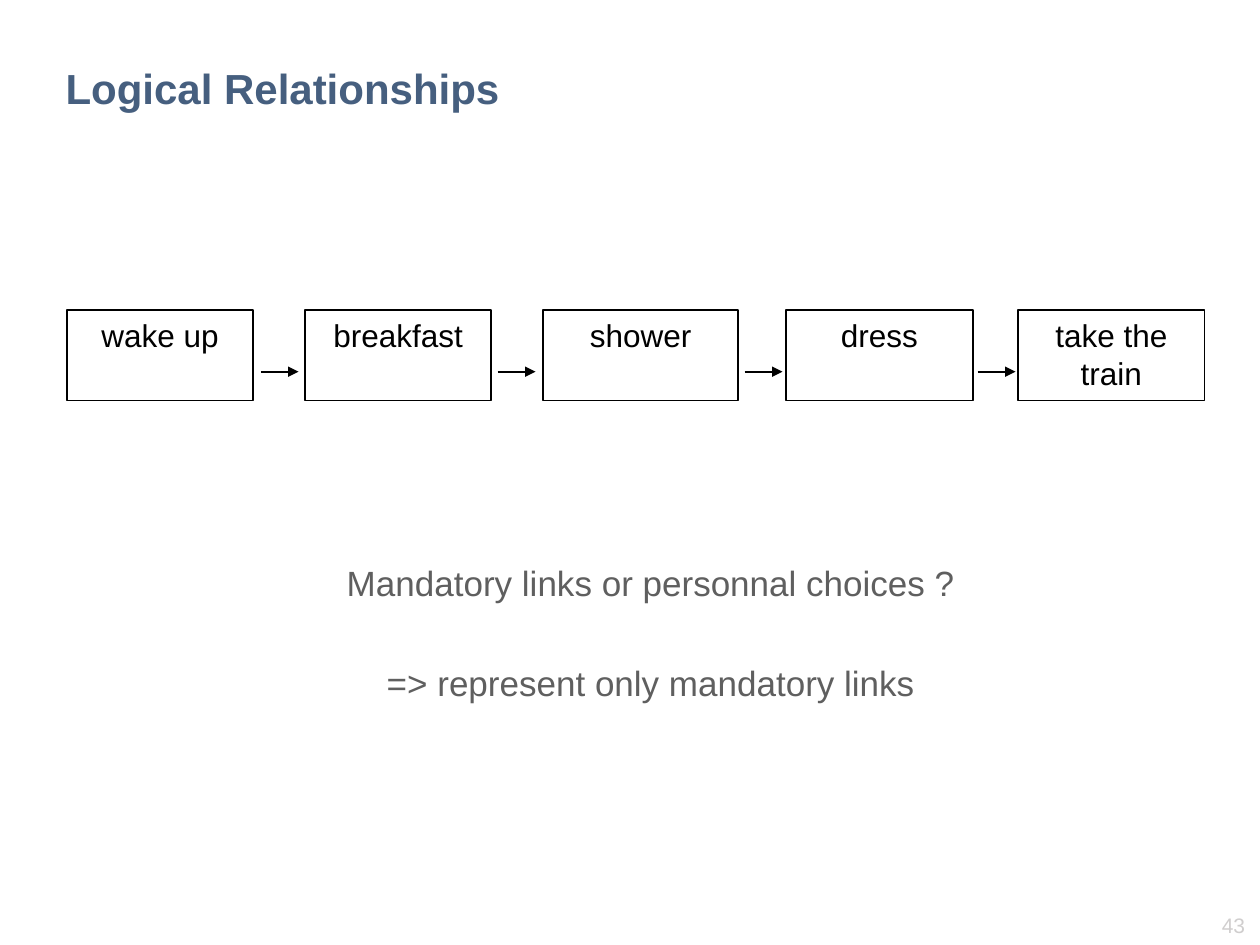
from lxml import etree
from pptx import Presentation
from pptx.dml.color import RGBColor
from pptx.enum.shapes import MSO_CONNECTOR, MSO_SHAPE
from pptx.enum.text import MSO_ANCHOR, PP_ALIGN
from pptx.oxml.ns import qn
from pptx.util import Inches, Pt

RECTANGLE = MSO_SHAPE.RECTANGLE
STRAIGHT = MSO_CONNECTOR.STRAIGHT
TOP, MIDDLE = MSO_ANCHOR.TOP, MSO_ANCHOR.MIDDLE
LEFT, CENTER, RIGHT = PP_ALIGN.LEFT, PP_ALIGN.CENTER, PP_ALIGN.RIGHT

FONT = "Arial"
COLORS = {
    "title": "465F7F",
    "line": "000000",
    "step": "000000",
    "question": "5F5F5F",
    "page": "D0CECE",
}
STEPS = [
    ("wake up", 0.53, 1.48),
    ("breakfast", 2.42, 1.48),
    ("shower", 4.31, 1.55),
    ("dress", 6.24, 1.48),
    ("take the train", 8.08, 1.48),
]
ARROW_STARTS = [2.07, 3.95, 5.91, 7.76]
ARROW_LENGTH = 0.3


def color(name):
    return RGBColor.from_string(COLORS[name])


def write(frame, *lines, size, ink, bold=False, align=LEFT, anchor=TOP, gap=0):
    frame.word_wrap = True
    frame.vertical_anchor = anchor
    for index, line in enumerate(lines):
        paragraph = frame.paragraphs[0] if index == 0 else frame.add_paragraph()
        paragraph.alignment = align
        paragraph.space_before = Pt(gap if index else 0)
        run = paragraph.add_run()
        run.text = line
        run.font.name = FONT
        run.font.size = Pt(size)
        run.font.bold = bold
        run.font.color.rgb = color(ink)


def place_title(slide, left, top, width, height):
    title = slide.shapes.title
    title.left, title.top = Inches(left), Inches(top)
    title.width, title.height = Inches(width), Inches(height)
    write(title.text_frame, "Logical Relationships", size=24, ink="title",
          bold=True, anchor=MIDDLE)


def add_step(slide, label, left, top, width, height):
    step = slide.shapes.add_shape(
        RECTANGLE, Inches(left), Inches(top), Inches(width), Inches(height))
    step.shadow.inherit = False
    step.fill.background()
    step.line.color.rgb = color("line")
    step.line.width = Pt(1)
    write(step.text_frame, label, size=18, ink="step", align=CENTER)


def add_arrow(slide, left, y, length):
    arrow = slide.shapes.add_connector(
        STRAIGHT, Inches(left), Inches(y), Inches(left + length), Inches(y))
    arrow.line.color.rgb = color("line")
    arrow.line.width = Pt(1)
    etree.SubElement(arrow.line._get_or_add_ln(), qn("a:tailEnd"), type="triangle")
    etree.SubElement(arrow._element.spPr, qn("a:effectLst"))


def add_sequence(slide, top, height):
    for label, left, width in STEPS:
        add_step(slide, label, left, top, width, height)
    for start in ARROW_STARTS:
        add_arrow(slide, start, top + 0.49, ARROW_LENGTH)


def add_text(slide, left, top, width, height, *lines, **style):
    box = slide.shapes.add_textbox(
        Inches(left), Inches(top), Inches(width), Inches(height))
    write(box.text_frame, *lines, **style)
    return box


def add_question(slide, left, top, width, height):
    question = add_text(
        slide, left, top, width, height,
        "Mandatory links or personnal choices ?",
        "=> represent only mandatory links",
        size=20, ink="question", align=CENTER, gap=33)
    question.text_frame.margin_left = Inches(0.6)


def add_page_number(slide, left, top, width, height):
    add_text(slide, left, top, width, height, "43",
             size=12, ink="page", align=RIGHT)


def main():
    deck = Presentation()
    deck.slide_width, deck.slide_height = Inches(10), Inches(7.5)
    slide = deck.slides.add_slide(deck.slide_layouts[5])
    place_title(slide, 0.42, 0.32, 7.77, 0.75)
    add_sequence(slide, 2.46, 0.72)
    add_question(slide, 1.6, 4.41, 6.63, 1.79)
    add_page_number(slide, 9.16, 7.19, 0.82, 0.3)
    deck.save("out.pptx")


if __name__ == "__main__":
    main()
